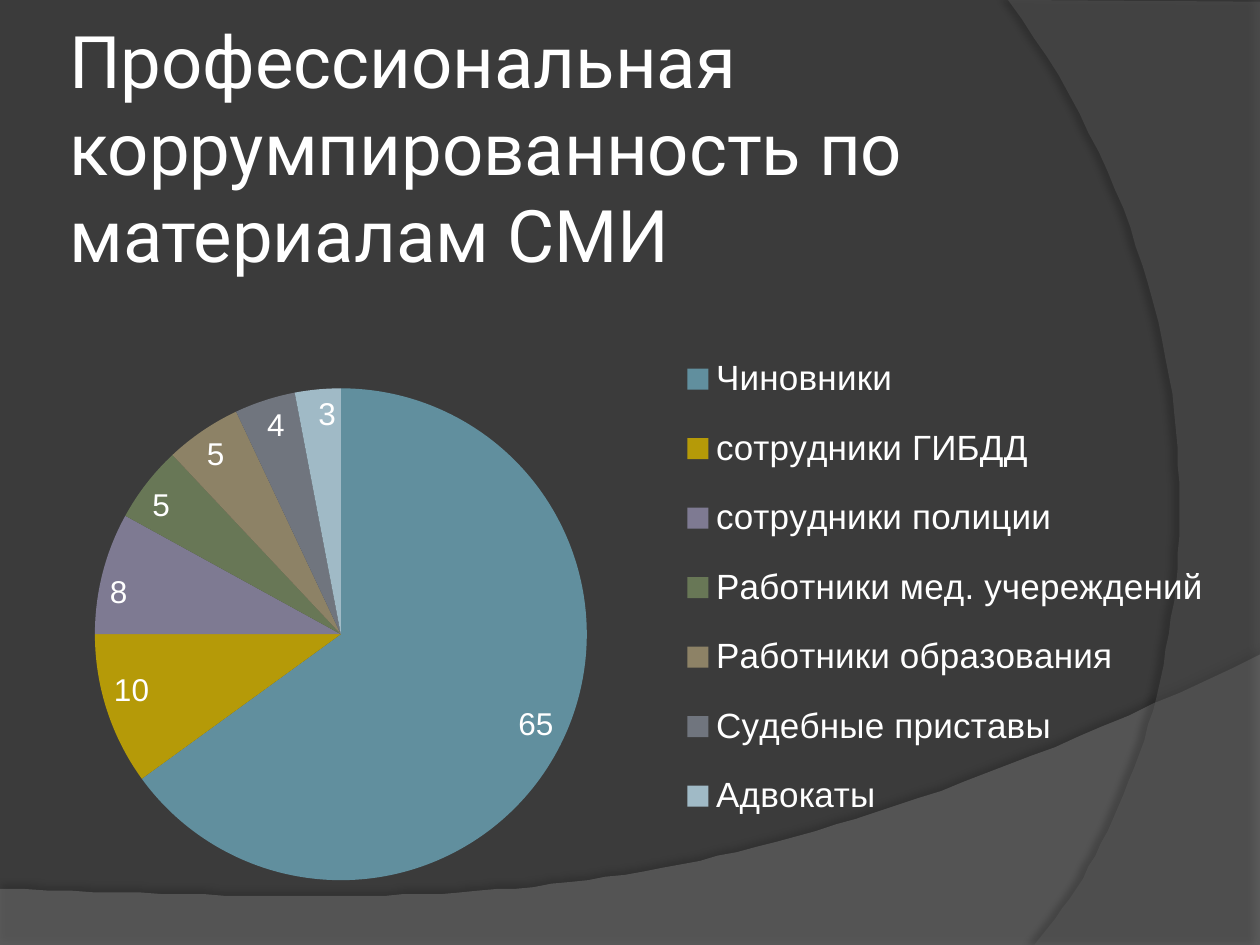
import lxml.etree
import pptx
import pptx.chart.data
import pptx.dml.color
import pptx.enum.chart
import pptx.enum.text
import pptx.oxml
import pptx.oxml.ns
import pptx.util

COLORS = {
    "background": "3B3B3B",
    "wave": "7F7F7F",
    "arc": "5E5E5E",
    "shadow": "000000",
    "text": "FFFFFF",
}

SHARES = {
    "Чиновники": (65, "618F9E"),
    "сотрудники ГИБДД": (10, "B59A08"),
    "сотрудники полиции": (8, "7E7A92"),
    "Работники мед. учереждений": (5, "687756"),
    "Работники образования": (5, "8D8266"),
    "Судебные приставы": (4, "70757E"),
    "Адвокаты": (3, "A0BAC6"),
}


def bezier(start, control_1, control_2, end, steps=60):
    """Return points along a cubic curve, leaving out its start."""
    points = []
    for step in range(1, steps + 1):
        t = step / steps
        weights = ((1 - t) ** 3, 3 * t * (1 - t) ** 2, 3 * t * t * (1 - t), t ** 3)
        corners = (start, control_1, control_2, end)
        points.append(tuple(sum(w * c[axis] for w, c in zip(weights, corners)) for axis in (0, 1)))
    return points


class SlideBuilder:
    """Hold the style and the current slide, and draw each kind of element."""

    def __init__(self, presentation):
        self.slide = presentation.slides.add_slide(presentation.slide_layouts[6])
        self.paint(self.slide.background.fill, "background")

    def color(self, name):
        return pptx.dml.color.RGBColor.from_string(COLORS.get(name, name))

    def paint(self, fill, name):
        fill.solid()
        fill.fore_color.rgb = self.color(name)

    def apply(self, target, **values):
        for name, value in values.items():
            setattr(target, name, value)

    def style_font(self, font, name, size):
        self.apply(font, name=name, size=pptx.util.Pt(size), bold=False)
        font.color.rgb = self.color("text")

    def panel(self, points, fill, opacity, shadow_opacity, distance, direction):
        builder = self.slide.shapes.build_freeform(*points[0], scale=pptx.util.Pt(1))
        builder.add_line_segments(points[1:], close=True)
        shape = builder.convert_to_shape()
        self.paint(shape.fill, fill)
        shape.line.fill.background()
        shape.shadow.inherit = False
        qn = pptx.oxml.ns.qn
        properties = shape.element.spPr
        fill_color = properties.find(qn("a:solidFill"))[0]
        lxml.etree.SubElement(fill_color, qn("a:alpha"), val=str(opacity * 1000))
        shadow = lxml.etree.SubElement(
            properties.find(qn("a:effectLst")), qn("a:outerShdw"),
            blurRad=str(pptx.util.Pt(4)), dist=str(pptx.util.Pt(distance)),
            dir=str(direction * 60000), algn="ctr", rotWithShape="0")
        shadow_color = lxml.etree.SubElement(shadow, qn("a:srgbClr"), val=COLORS["shadow"])
        lxml.etree.SubElement(shadow_color, qn("a:alpha"), val=str(shadow_opacity * 1000))

    def title(self, text, box, size):
        frame = self.slide.shapes.add_textbox(*map(pptx.util.Pt, box)).text_frame
        margins = {f"margin_{side}": pptx.util.Pt(3.6) for side in ("left", "top", "right", "bottom")}
        self.apply(frame, word_wrap=True, vertical_anchor=pptx.enum.text.MSO_ANCHOR.MIDDLE, **margins)
        run = frame.paragraphs[0].add_run()
        run.text = text
        self.style_font(run.font, "Roboto", size)

    def place(self, parent, index, box, inner=False):
        for old in parent.findall(pptx.oxml.ns.qn("c:layout")):
            parent.remove(old)
        target = '<c:layoutTarget val="inner"/>' if inner else ""
        modes = "".join(f'<c:{axis}Mode val="edge"/>' for axis in "xy")
        values = "".join(f'<c:{key} val="{value}"/>' for key, value in zip("xywh", box))
        parent.insert(index, pptx.oxml.parse_xml(
            f'<c:layout {pptx.oxml.ns.nsdecls("c")}><c:manualLayout>'
            f"{target}{modes}{values}</c:manualLayout></c:layout>"))

    def pie(self, shares, box, pie_box, legend_box):
        data = pptx.chart.data.CategoryChartData()
        data.categories = list(shares)
        data.add_series("", [value for value, _ in shares.values()])
        kind = pptx.enum.chart.XL_CHART_TYPE.PIE
        chart = self.slide.shapes.add_chart(kind, *map(pptx.util.Pt, box), data).chart
        self.apply(chart, has_title=False, has_legend=True)
        self.style_font(chart.font, "Arial", 18)
        self.apply(chart.legend, include_in_layout=False,
                   position=pptx.enum.chart.XL_LEGEND_POSITION.RIGHT)
        self.style_font(chart.legend.font, "Arial", 20)
        plot = chart.plots[0]
        self.apply(plot, vary_by_categories=True, has_data_labels=True)
        self.apply(plot.data_labels, show_value=True, show_percentage=False,
                   position=pptx.enum.chart.XL_LABEL_POSITION.INSIDE_END)
        self.style_font(plot.data_labels.font, "Arial", 18)
        for index, (_, color) in enumerate(shares.values()):
            slice_format = plot.series[0].points[index].format
            self.paint(slice_format.fill, color)
            slice_format.line.fill.background()
        qn = pptx.oxml.ns.qn
        self.place(chart.element.find(f".//{qn('c:plotArea')}"), 0, pie_box, inner=True)
        self.place(chart.element.find(f".//{qn('c:legend')}"), 1, legend_box)


def main():
    presentation = pptx.Presentation()
    presentation.slide_width = pptx.util.Pt(720)
    presentation.slide_height = pptx.util.Pt(540)
    builder = SlideBuilder(presentation)
    wave = [(0, 507.6), (0, 540), (720, 540), (720, 374.4)]
    wave += bezier(wave[-1], (402.5, 524.9), (281.5, 517.7), wave[0])
    builder.panel(wave, "wave", 45, 35, 3.5, 270)
    arc = [(720, 1.4), (720, 540), (591, 540)]
    arc += bezier(arc[-1], (673.2, 445.7), (733, 216), (576, 0))
    builder.panel(arc, "arc", 40, 45, 4, 180)
    builder.title("Профессиональная коррумпированность по материалам СМИ",
                  (36, 21.6, 618.5, 123.8), 41.4)
    builder.pie(SHARES, (1.4, 139.7, 699.8, 373.7),
                (0.0755, 0.22, 0.4017, 0.7524), (0.55, 0.13, 0.44, 0.79))
    presentation.save("out.pptx")


if __name__ == "__main__":
    main()
